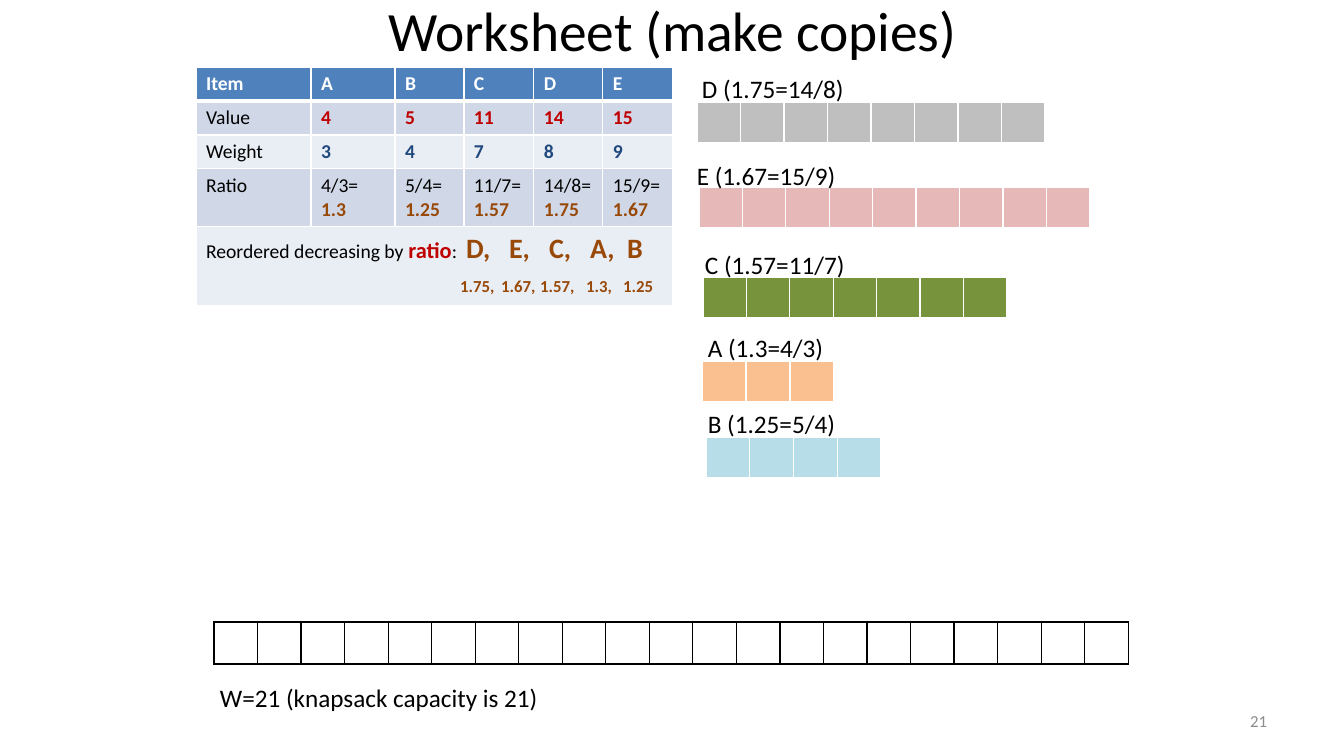
from lxml.etree import SubElement
from pptx import Presentation
from pptx.dml.color import RGBColor
from pptx.enum.text import MSO_ANCHOR as Anchor, MSO_AUTO_SIZE as AutoSize, PP_ALIGN as Align
from pptx.oxml.ns import qn
from pptx.util import Pt

EMU_PER_PX = 914400 / 100.8
FONT = "Calibri"
BLACK, WHITE, GRAY = "000000", "FFFFFF", "8C8C8C"
RED, NAVY, BROWN = "C00000", "1F497D", "984807"
HEADER_FILL, DARK_BAND, LIGHT_BAND = "4F81BD", "D0D8E8", "E9EDF4"

TITLE = ("Worksheet (make copies)", (219, 3, 907, 52))
CAPACITY_LABEL = ("W=21 (knapsack capacity is 21)", (210, 677, 342, 40))
SLIDE_NUMBER = ("21", (964, 701, 313, 40))
CAPACITY_STRIP = (21, (214, 622, 915, 42))

ITEM_STRIPS = [
    ("D (1.75=14/8)", (692, 68, 164, 40), 8, (697, 102, 348, 40), "BFBFBF"),
    ("E (1.67=15/9)", (687, 155, 160, 40), 9, (699, 187, 391, 41), "E6B9B8"),
    ("C (1.57=11/7)", (695, 244, 161, 40), 7, (703, 277, 304, 41), "77933C"),
    ("A (1.3=4/3)", (698, 327, 137, 40), 3, (702, 361, 132, 41), "FAC090"),
    ("B (1.25=5/4)", (698, 403, 149, 40), 4, (706, 437, 175, 41), "B7DEE8"),
]

ITEMS_ORIGIN = (196, 67)
ITEMS_COLUMNS = [115, 84, 69, 70, 69, 70]
ITEMS_ROWS = [34, 34, 33, 57, 78]
HEADER = ["Item", "A", "B", "C", "D", "E"]
VALUES = ["4", "5", "11", "14", "15"]
WEIGHTS = ["3", "4", "7", "8", "9"]
RATIOS = [("4/3=", "1.3"), ("5/4=", "1.25"), ("11/7=", "1.57"), ("14/8=", "1.75"), ("15/9=", "1.67")]
ORDER_LINES = [
    ([("Reordered decreasing by ", 14, BLACK, False), ("ratio", 16, RED, True),
      (":", 14, BLACK, False), ("\tD,\tE,\tC,\tA,\tB", 20, BROWN, True)],
     [260, 303, 343, 384, 421]),
    ([("\t", 20, BROWN, True), ("1.75,\t1.67,\t1.57,\t1.3,\t1.25", 12, BROWN, True)],
     [254, 295, 334, 380, 417]),
]


def emu(px):
    return round(px * EMU_PER_PX)


def color(value):
    return RGBColor.from_string(value)


def add_run(paragraph, text, size, text_color, bold=False):
    run = paragraph.add_run()
    run.text = text
    run.font.name = FONT
    run.font.size = Pt(size)
    run.font.bold = bold
    run.font.color.rgb = color(text_color)


def add_text(slide, text, box, size=18, text_color=BLACK, align=Align.LEFT, fitted=False):
    frame = slide.shapes.add_textbox(*map(emu, box)).text_frame
    frame.word_wrap = not fitted
    frame.auto_size = AutoSize.SHAPE_TO_FIT_TEXT if fitted else AutoSize.NONE
    frame.vertical_anchor = Anchor.TOP if fitted else Anchor.MIDDLE
    paragraph = frame.paragraphs[0]
    paragraph.alignment = align
    add_run(paragraph, text, size, text_color)


def style_cell(cell, fill, border, bottom=1):
    properties = cell._tc.get_or_add_tcPr()
    for side, width in (("L", 1), ("R", 1), ("T", 1), ("B", bottom)):
        line = SubElement(properties, qn("a:ln" + side), w=str(Pt(width)))
        solid = SubElement(line, qn("a:solidFill"))
        SubElement(solid, qn("a:srgbClr"), val=border)
    if fill:
        cell.fill.solid()
        cell.fill.fore_color.rgb = color(fill)
    else:
        cell.fill.background()


def add_plain_table(slide, rows, columns, box):
    table = slide.shapes.add_table(rows, columns, *map(emu, box)).table
    table.first_row = False
    table.horz_banding = False
    return table


def add_strip(slide, count, box, fill, border):
    table = add_plain_table(slide, 1, count, box)
    for cell in table.iter_cells():
        style_cell(cell, fill, border)


def set_tabs(paragraph, stops):
    tabs = SubElement(paragraph._p.get_or_add_pPr(), qn("a:tabLst"))
    for stop in stops:
        SubElement(tabs, qn("a:tab"), pos=str(emu(stop)), algn="l")


def fill_cell(cell, lines):
    frame = cell.text_frame
    for index, runs in enumerate(lines):
        paragraph = frame.add_paragraph() if index else frame.paragraphs[0]
        for run in runs:
            add_run(paragraph, *run)


def add_items_table(slide):
    box = (*ITEMS_ORIGIN, sum(ITEMS_COLUMNS), sum(ITEMS_ROWS))
    table = add_plain_table(slide, len(ITEMS_ROWS), len(ITEMS_COLUMNS), box)
    for column, width in zip(table.columns, ITEMS_COLUMNS):
        column.width = emu(width)
    for row, height in zip(table.rows, ITEMS_ROWS):
        row.height = emu(height)

    def label(text):
        return [[(text, 14, BLACK)]]

    body = [
        [[[(text, 14, WHITE, True)]] for text in HEADER],
        [label("Value")] + [[[(text, 14, RED, True)]] for text in VALUES],
        [label("Weight")] + [[[(text, 14, NAVY, True)]] for text in WEIGHTS],
        [label("Ratio")] + [[[(division, 14, BLACK)], [(result, 14, BROWN, True)]]
                            for division, result in RATIOS],
        [[runs for runs, stops in ORDER_LINES]],
    ]
    fills = [HEADER_FILL, DARK_BAND, LIGHT_BAND, DARK_BAND, LIGHT_BAND]
    for row_index, (row, fill) in enumerate(zip(table.rows, fills)):
        for cell in row.cells:
            style_cell(cell, fill, WHITE, 1 if row_index else 3)
        for cell, lines in zip(row.cells, body[row_index]):
            fill_cell(cell, lines)

    last = len(ITEMS_ROWS) - 1
    order_cell = table.cell(last, 0)
    order_cell.merge(table.cell(last, len(ITEMS_COLUMNS) - 1))
    for paragraph, (runs, stops) in zip(order_cell.text_frame.paragraphs, ORDER_LINES):
        set_tabs(paragraph, stops)


def main():
    presentation = Presentation()
    presentation.slide_width = emu(1344)
    presentation.slide_height = emu(756)
    slide = presentation.slides.add_slide(presentation.slide_layouts[6])
    add_text(slide, *TITLE, size=39.6, align=Align.CENTER)
    add_items_table(slide)
    for text, label_box, count, strip_box, fill in ITEM_STRIPS:
        add_strip(slide, count, strip_box, fill, WHITE)
        add_text(slide, text, label_box, fitted=True)
    add_strip(slide, *CAPACITY_STRIP, None, BLACK)
    add_text(slide, *CAPACITY_LABEL, fitted=True)
    add_text(slide, *SLIDE_NUMBER, size=12, text_color=GRAY, align=Align.RIGHT)
    presentation.save("out.pptx")


if __name__ == "__main__":
    main()
